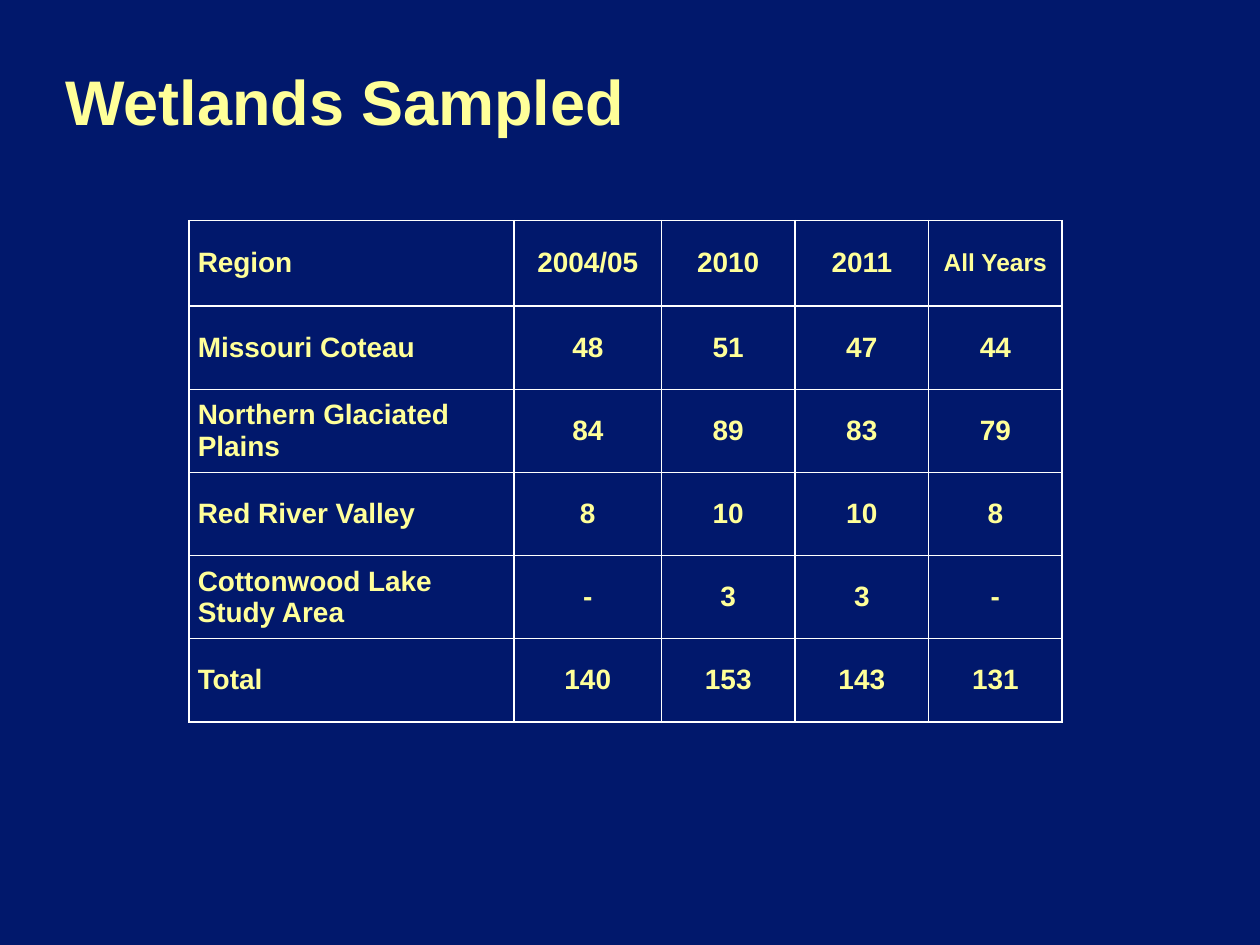
import pptx
import pptx.dml.color
import pptx.enum.text
import pptx.oxml
import pptx.oxml.ns
import pptx.util

Inches = pptx.util.Inches
RGBColor = pptx.dml.color.RGBColor
PP_ALIGN = pptx.enum.text.PP_ALIGN
MSO_ANCHOR = pptx.enum.text.MSO_ANCHOR

NAVY = RGBColor(0x01, 0x18, 0x6C)
YELLOW = RGBColor(0xFF, 0xFF, 0x99)
WHITE = RGBColor(0xFF, 0xFF, 0xFF)

COLUMN_WIDTHS = [2.58, 1.17, 1.06, 1.06, 1.06]
HEADER_HEIGHT = 0.68
ROW_HEIGHT = 0.66
WETLANDS = [
    ["Region", "2004/05", "2010", "2011", "All Years"],
    ["Missouri Coteau", "48", "51", "47", "44"],
    ["Northern Glaciated Plains", "84", "89", "83", "79"],
    ["Red River Valley", "8", "10", "10", "8"],
    ["Cottonwood Lake Study Area", "-", "3", "3", "-"],
    ["Total", "140", "153", "143", "131"],
]


def format_text(para, size, align):
    para.alignment = align
    for span in para.runs:
        span.font.name = "Arial"
        span.font.size = pptx.util.Pt(size)
        span.font.bold = True
        span.font.color.rgb = YELLOW


def add_title(page, text):
    title = page.shapes.title
    title.left, title.top = Inches(0.42), Inches(0.17)
    title.width, title.height = Inches(9.08), Inches(1.25)
    title.text_frame.text = text
    title.text_frame.vertical_anchor = MSO_ANCHOR.MIDDLE
    format_text(title.text_frame.paragraphs[0], 36, PP_ALIGN.LEFT)


def add_borders(cell, color, points):
    properties = cell._tc.get_or_add_tcPr()
    for side in ("lnL", "lnR", "lnT", "lnB"):
        properties.append(pptx.oxml.parse_xml(
            f'<a:{side} {pptx.oxml.ns.nsdecls("a")} w="{pptx.util.Pt(points)}">'
            f'<a:solidFill><a:srgbClr val="{color}"/></a:solidFill></a:{side}>'
        ))


def fill_cell(cell, text, size, align):
    cell.text_frame.text = text
    cell.vertical_anchor = MSO_ANCHOR.MIDDLE
    cell.margin_left = cell.margin_right = Inches(0.07)
    cell.margin_top = cell.margin_bottom = 0
    format_text(cell.text_frame.paragraphs[0], size, align)
    add_borders(cell, WHITE, 1)
    cell.fill.background()


def add_wetlands_table(page, rows):
    heights = [HEADER_HEIGHT] + [ROW_HEIGHT] * (len(rows) - 1)
    table = page.shapes.add_table(
        len(rows), len(COLUMN_WIDTHS), Inches(1.5), Inches(1.75),
        Inches(sum(COLUMN_WIDTHS)), Inches(sum(heights)),
    ).table
    table.first_row = table.horz_banding = False
    for column, width in zip(table.columns, COLUMN_WIDTHS):
        column.width = Inches(width)
    for row, height, values in zip(table.rows, heights, rows):
        row.height = Inches(height)
        for index, (cell, text) in enumerate(zip(row.cells, values)):
            size = 14 if text == "All Years" else 16
            align = PP_ALIGN.CENTER if index else PP_ALIGN.LEFT
            fill_cell(cell, text, size, align)


def main():
    deck = pptx.Presentation()
    deck.slide_width, deck.slide_height = Inches(10), Inches(7.5)
    page = deck.slides.add_slide(deck.slide_layouts[5])
    page.background.fill.solid()
    page.background.fill.fore_color.rgb = NAVY
    add_title(page, "Wetlands Sampled")
    add_wetlands_table(page, WETLANDS)
    deck.save("out.pptx")


if __name__ == "__main__":
    main()
